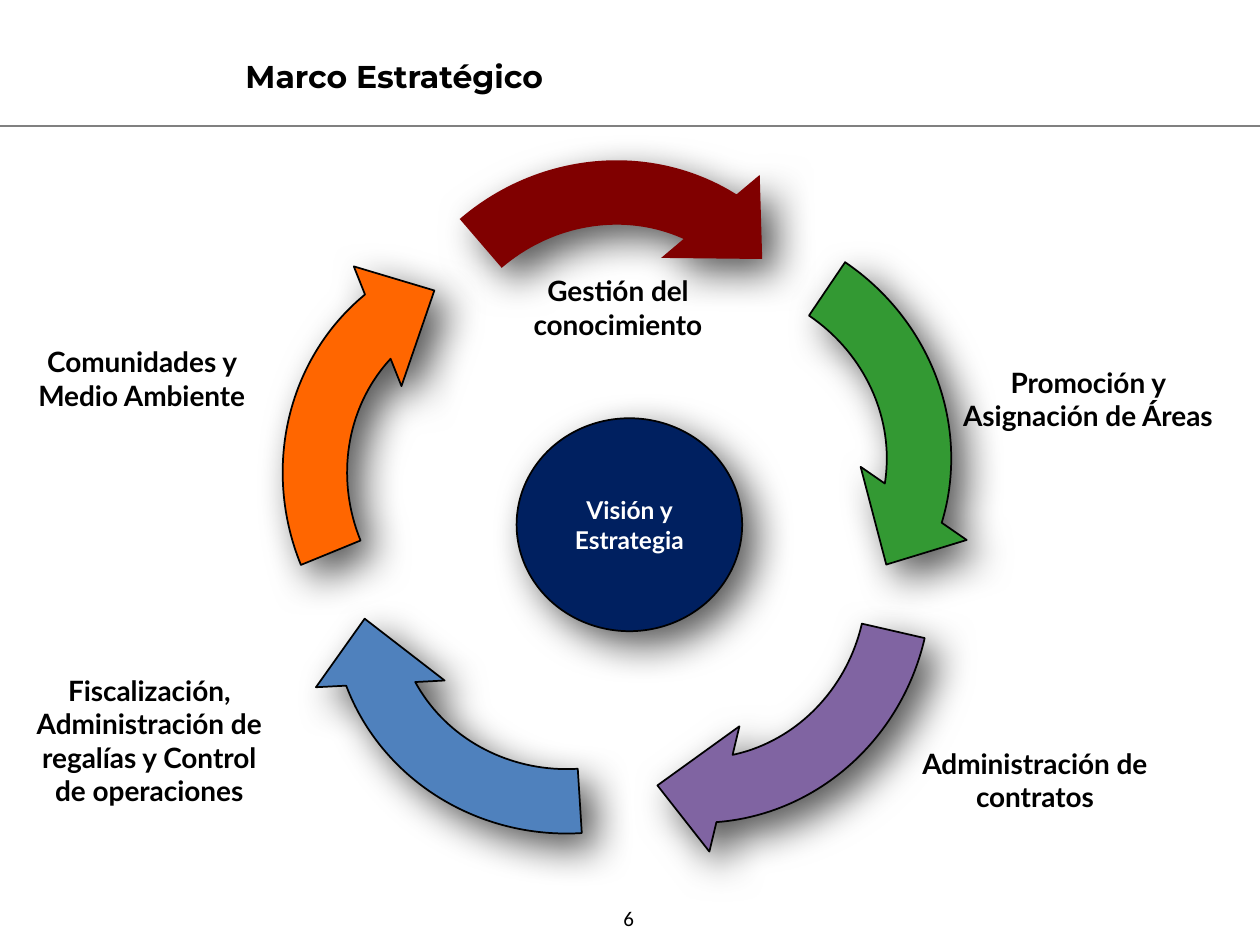
from lxml.etree import SubElement
from pptx import Presentation
from pptx.dml.color import RGBColor
from pptx.enum.shapes import MSO_CONNECTOR, MSO_SHAPE
from pptx.enum.text import MSO_ANCHOR, MSO_AUTO_SIZE, PP_ALIGN
from pptx.oxml.ns import qn
from pptx.util import Pt

COLORS = {
    "black": "000000", "white": "FFFFFF", "gray": "808080",
    "red": "800000", "green": "339933", "purple": "8064A2",
    "blue": "4F81BD", "orange": "FF6600", "navy": "002060",
}


def write(s, text, size, font="Lato", color="black", bold=True, align=PP_ALIGN.CENTER):
    tf = s.text_frame
    tf.word_wrap = True
    tf.vertical_anchor = MSO_ANCHOR.MIDDLE
    p = tf.paragraphs[0]
    p.alignment = align
    r = p.add_run()
    r.text = text
    r.font.name = font
    r.font.size = Pt(size)
    r.font.bold = bold
    r.font.color.rgb = RGBColor.from_string(COLORS[color])


def style(s, fill, outlined=True):
    """Fill and outline a shape and give it the soft diagonal shadow."""
    s.fill.solid()
    s.fill.fore_color.rgb = RGBColor.from_string(COLORS[fill])
    if outlined:
        s.line.color.rgb = RGBColor.from_string(COLORS["black"])
        s.line.width = Pt(1)
    else:
        s.line.fill.background()
    s.shadow.inherit = False
    effects = s.element.spPr.find(qn("a:effectLst"))
    shadow = SubElement(effects, qn("a:outerShdw"), blurRad=str(Pt(23)), dist=str(Pt(11)),
                        dir="2700000", algn="tl", rotWithShape="0")
    color = SubElement(shadow, qn("a:srgbClr"), val=COLORS["black"])
    SubElement(color, qn("a:alpha"), val="65000")


prs = Presentation()
prs.slide_width, prs.slide_height = Pt(720), Pt(540)
slide = prs.slides.add_slide(prs.slide_layouts[6])

rule = slide.shapes.add_connector(MSO_CONNECTOR.STRAIGHT, Pt(0), Pt(72), Pt(720), Pt(72))
rule.line.color.rgb = RGBColor.from_string(COLORS["gray"])
rule.line.width = Pt(0.75)
SubElement(rule.element.spPr, qn("a:effectLst"))

page_number = slide.shapes.add_textbox(Pt(340.5), Pt(509), Pt(37.5), Pt(31.5))
write(page_number, "6", 12, font="Calibri", bold=False)

# Cycle arrows: left, top, rotation, fill
arrows = [
    (193.7, 75.6, 319.9, "red"),
    (249.8, 188.6, 103.5, "purple"),
    (171.4, 200.2, 177, "blue"),
    (138.2, 126.7, 248.3, "orange"),
    (257.8, 109.4, 34.6, "green"),
]
for left, top, rotation, fill in arrows:
    s = slide.shapes.add_shape(MSO_SHAPE.CIRCULAR_ARROW, Pt(left), Pt(top), Pt(306), Pt(294.5))
    for i, value in enumerate((0.125, 11.42, 204.58, 161.65, 0.125)):
        s.adjustments[i] = value
    s.rotation = rotation
    style(s, fill, outlined=fill != "red")

# Stage labels: left, top, height, text
labels = [
    (274.3, 152.6, 46, "Gestión del conocimiento"),
    (542.9, 195.1, 65.5, "Promoción y Asignación de Áreas"),
    (512.6, 422.6, 46, "Administración de contratos"),
    (6.5, 370.8, 104.4, "Fiscalización, Administración de regalías y Control de operaciones"),
    (2.2, 193, 46, "Comunidades y Medio Ambiente"),
]
for left, top, height, text in labels:
    s = slide.shapes.add_textbox(Pt(left), Pt(top), Pt(157.7), Pt(height))
    write(s, text, 16)
    s.text_frame.auto_size = MSO_AUTO_SIZE.SHAPE_TO_FIT_TEXT

core = slide.shapes.add_shape(MSO_SHAPE.OVAL, Pt(295.2), Pt(239), Pt(128.9), Pt(121.7))
style(core, "navy")
write(core, "Visión y Estrategia", 14, color="white")

title = slide.shapes.add_textbox(Pt(133.2), Pt(28.8), Pt(460.8), Pt(28.8))
write(title, "Marco Estratégico", 18, font="Montserrat", align=PP_ALIGN.LEFT)
title.text_frame.auto_size = MSO_AUTO_SIZE.SHAPE_TO_FIT_TEXT

prs.save("out.pptx")
